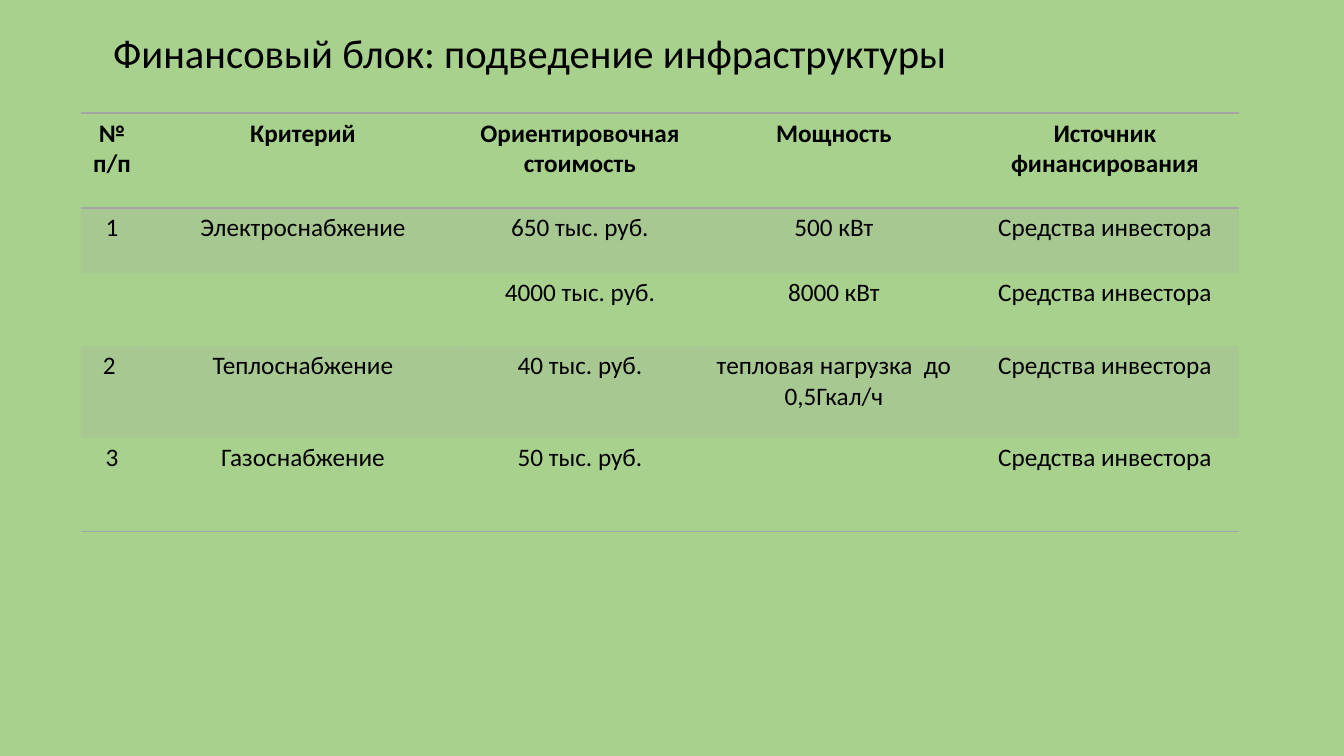
import dataclasses

import lxml.etree
import pptx
import pptx.dml.color
import pptx.enum.text
import pptx.oxml.ns
import pptx.util


@dataclasses.dataclass(frozen=True)
class Theme:
    font: str = "Calibri"
    title_size: int = 29
    table_size: int = 18
    background: str = "A9D18E"
    text: str = "000000"
    grey: str = "A5A5A5"
    band_alpha: int = 20


THEME = Theme()
PX = 914400 / 100.8
COLUMN_WIDTHS = [62, 320, 234, 274, 268]
ROW_HEIGHTS = [95, 65, 73, 92, 94]
INVESTOR = "Средства инвестора"
ROWS = [
    ["№ п/п", "Критерий", "Ориентировочная стоимость", "Мощность", "Источник финансирования"],
    ["1", "Электроснабжение", "650 тыс. руб.", "500 кВт", INVESTOR],
    ["", "", "4000 тыс. руб.", "8000 кВт", INVESTOR],
    ["2 ", "Теплоснабжение", "40 тыс. руб.", "тепловая нагрузка  до 0,5Гкал/ч", INVESTOR],
    ["3", "Газоснабжение", "50 тыс. руб.", "", INVESTOR],
]
# Sides of each row that carry a visible rule
RULED_SIDES = {0: ["lnT", "lnB"], 1: ["lnT"], len(ROWS) - 1: ["lnB"]}


def px(length):
    return pptx.util.Emu(round(length * PX))


def add_span(para, text, size, bold=False):
    span = para.add_run()
    span.text = text
    span.font.name = THEME.font
    span.font.size = pptx.util.Pt(size)
    span.font.bold = bold
    span.font.color.rgb = pptx.dml.color.RGBColor.from_string(THEME.text)


deck = pptx.Presentation()
deck.slide_width, deck.slide_height = px(1344), px(756)
page = deck.slides.add_slide(deck.slide_layouts[5])
page.background.fill.solid()
page.background.fill.fore_color.rgb = pptx.dml.color.RGBColor.from_string(THEME.background)

# Title
title = page.shapes.title
title.left, title.top, title.width, title.height = px(103), px(13), px(1159), px(85)
title.text_frame.word_wrap = True
title.text_frame.auto_size = pptx.enum.text.MSO_AUTO_SIZE.NONE
title.text_frame.vertical_anchor = pptx.enum.text.MSO_ANCHOR.MIDDLE
para = title.text_frame.paragraphs[0]
para.alignment = pptx.enum.text.PP_ALIGN.LEFT
para.line_spacing = 0.9
add_span(para, "Финансовый блок: подведение инфраструктуры", THEME.title_size)

# Table
table = page.shapes.add_table(
    len(ROWS), len(COLUMN_WIDTHS), px(81), px(113), px(sum(COLUMN_WIDTHS)), px(sum(ROW_HEIGHTS))
).table
table.first_row = True
table.horz_banding = False
for column, width in zip(table.columns, COLUMN_WIDTHS):
    column.width = px(width)

qn = pptx.oxml.ns.qn
for row_index, (height, texts) in enumerate(zip(ROW_HEIGHTS, ROWS)):
    table.rows[row_index].height = px(height)
    for column_index, text in enumerate(texts):
        cell = table.cell(row_index, column_index)
        para = cell.text_frame.paragraphs[0]
        para.alignment = pptx.enum.text.PP_ALIGN.CENTER
        if text:
            add_span(para, text, THEME.table_size, bold=row_index == 0)

        properties = cell._tc.get_or_add_tcPr()
        if row_index % 2:
            cell.fill.solid()
            cell.fill.fore_color.rgb = pptx.dml.color.RGBColor.from_string(THEME.grey)
            color = properties.find(".//" + qn("a:srgbClr"))
            lxml.etree.SubElement(color, qn("a:alpha"), val=str(THEME.band_alpha * 1000))
        else:
            cell.fill.background()

        # Borders come before the fill in the cell properties
        for position, side in enumerate(["lnL", "lnR", "lnT", "lnB"]):
            border = lxml.etree.Element(qn("a:" + side), w=str(pptx.util.Pt(1)))
            if side in RULED_SIDES.get(row_index, []):
                paint = lxml.etree.SubElement(border, qn("a:solidFill"))
                lxml.etree.SubElement(paint, qn("a:srgbClr"), val=THEME.grey)
            else:
                lxml.etree.SubElement(border, qn("a:noFill"))
            properties.insert(position, border)

deck.save("out.pptx")
